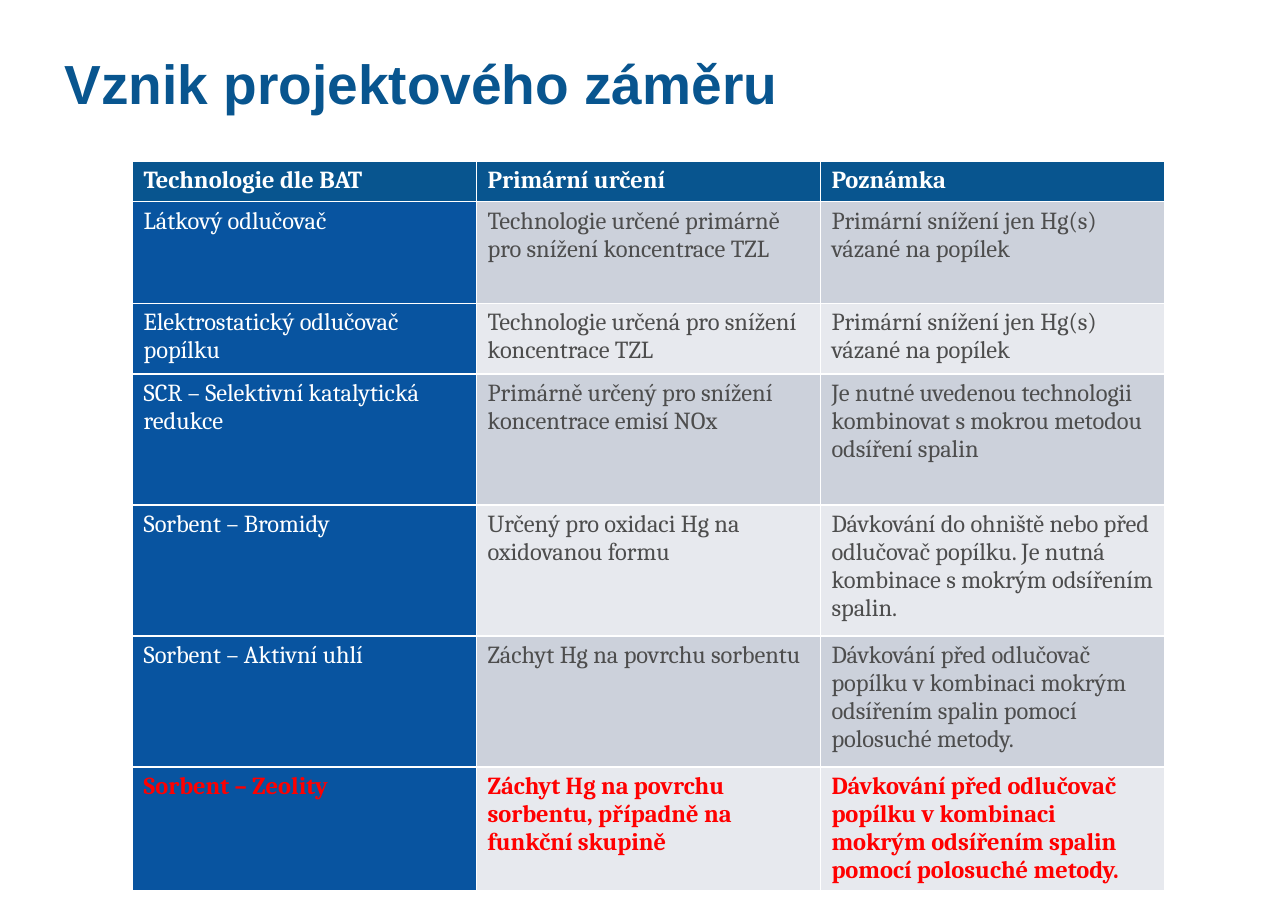
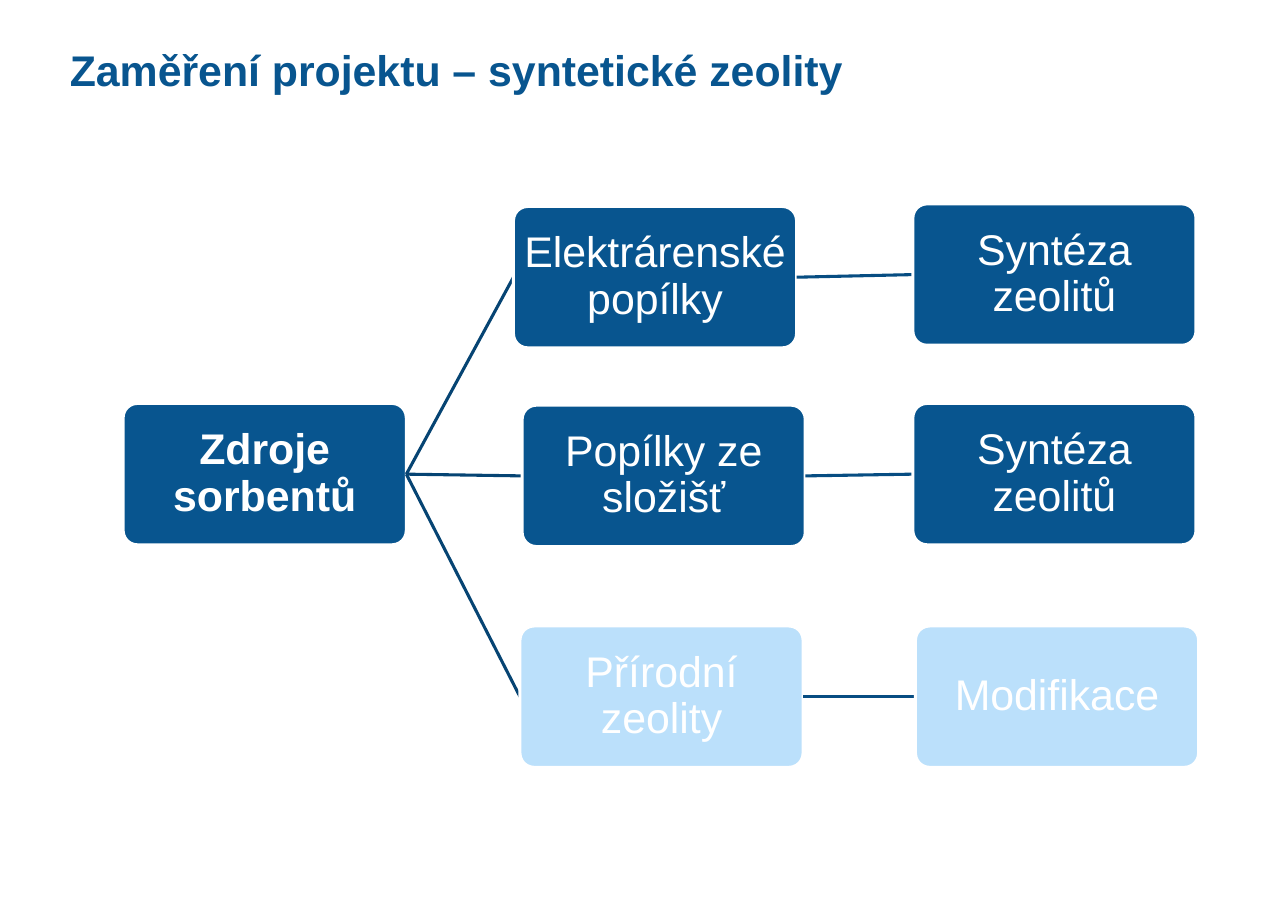
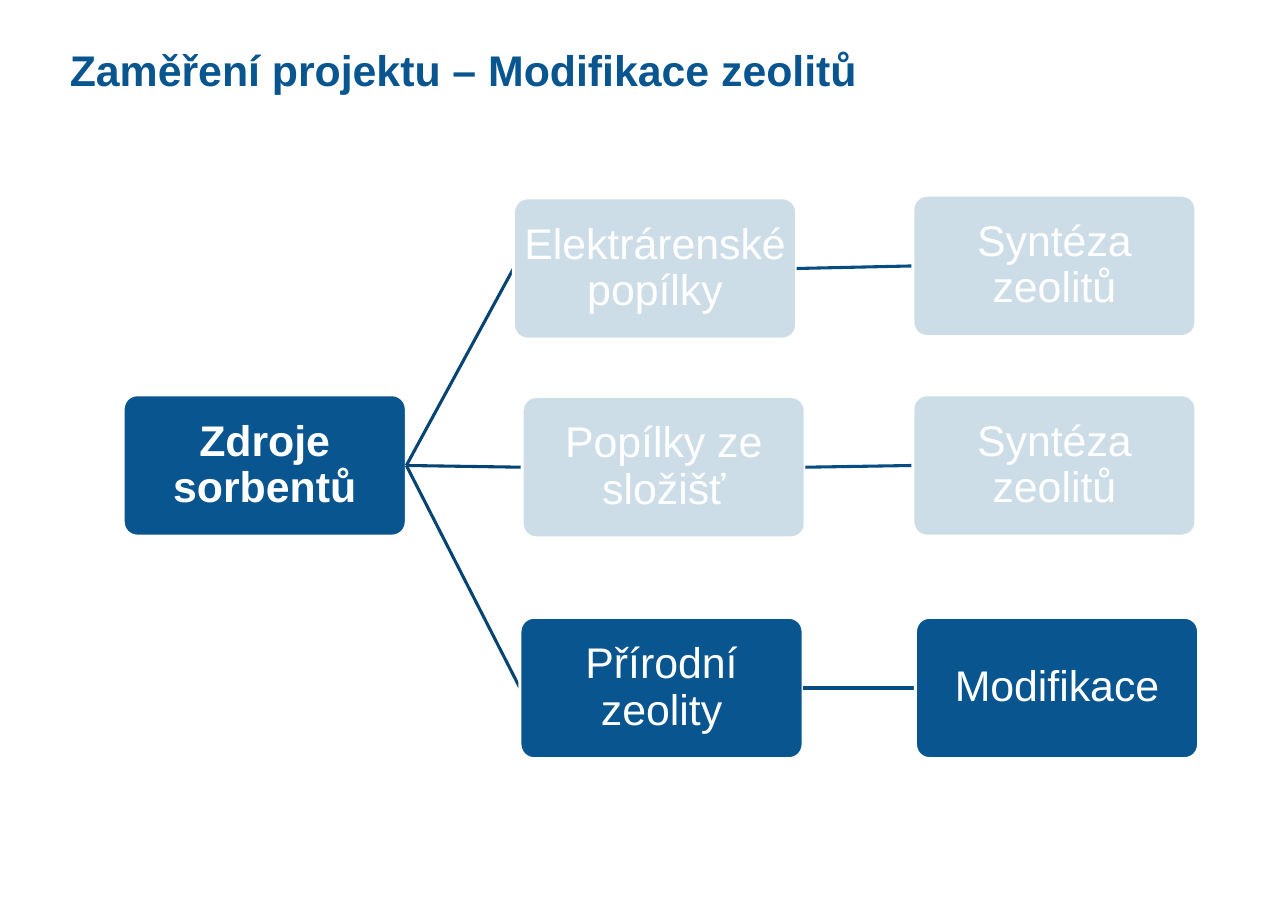
"""Build three slides on mercury capture technologies and sorbent sources."""
from dataclasses import dataclass

from lxml.etree import SubElement
from pptx import Presentation
from pptx.dml.color import RGBColor
from pptx.enum.shapes import MSO_CONNECTOR, MSO_SHAPE
from pptx.enum.text import MSO_ANCHOR, MSO_AUTO_SIZE, PP_ALIGN
from pptx.oxml.ns import qn
from pptx.util import Cm, Pt


@dataclass(frozen=True)
class Theme:
    blue: str = "08558F"
    pale_blue: str = "BBE0FB"
    first_column: str = "0854A0"
    bands: tuple = ("CCD1DB", "E7E9EE")
    white: str = "FFFFFF"
    grey: str = "4D4D4D"
    red: str = "FF0000"
    root_link: str = "064473"
    branch_link: str = "074D82"
    font: str = "Arial"
    table_font: str = "Cambria"
    big_title: int = 36
    title: int = 28
    box: int = 28
    table: int = 16
    line: int = 2


THEME = Theme()

TECHNOLOGY_TITLE = "Vznik projektového záměru"
TECHNOLOGIES = [
    ("Technologie dle BAT", "Primární určení", "Poznámka"),
    ("Látkový odlučovač",
     "Technologie určené primárně pro snížení koncentrace TZL",
     "Primární snížení jen Hg(s) vázané na popílek"),
    ("Elektrostatický odlučovač popílku",
     "Technologie určená pro snížení koncentrace TZL",
     "Primární snížení jen Hg(s) vázané na popílek"),
    ("SCR – Selektivní katalytická redukce",
     "Primárně určený pro snížení koncentrace emisí NOx",
     "Je nutné uvedenou technologii kombinovat s mokrou metodou odsíření spalin"),
    ("Sorbent – Bromidy",
     "Určený pro oxidaci Hg na oxidovanou formu",
     "Dávkování do ohniště nebo před odlučovač popílku. Je nutná kombinace "
     "s mokrým odsířením spalin."),
    ("Sorbent – Aktivní uhlí",
     "Záchyt Hg na povrchu sorbentu",
     "Dávkování před odlučovač popílku v kombinaci mokrým odsířením spalin "
     "pomocí polosuché metody."),
    ("Sorbent – Zeolity",
     "Záchyt Hg na povrchu sorbentu, případně na funkční skupině",
     "Dávkování před odlučovač popílku v kombinaci mokrým odsířením spalin "
     "pomocí polosuché metody."),
]
ROW_HEIGHTS = (0.94, 2.34, 1.63, 3.02, 3.02, 3.02, 2.67)
COLUMN_WIDTH = 7.93

ROOT = ("Zdroje sorbentů", 2.84, 9.3)
BRANCHES = [
    (("Elektrárenské popílky", 11.84, 4.76), ("Syntéza zeolitů", 21.05, 4.7)),
    (("Popílky ze složišť", 12.04, 9.34), ("Syntéza zeolitů", 21.05, 9.3)),
    (("Přírodní zeolity", 11.99, 14.43), ("Modifikace", 21.11, 14.43)),
]
BOX_WIDTH, BOX_HEIGHT = 6.53, 3.26

SOLID, PALE, FADED = (THEME.blue, 100), (THEME.pale_blue, 100), (THEME.blue, 20)
DIAGRAMS = [
    ("Zaměření projektu – syntetické zeolity", 0, (SOLID, SOLID, PALE)),
    ("Zaměření projektu – Modifikace zeolitů", -0.2, (FADED, FADED, SOLID)),
]


def rgb(color):
    return RGBColor.from_string(color)


def set_font(p, name, size, color, bold=False):
    p.font.name = name
    p.font.size = Pt(size)
    p.font.bold = bold
    p.font.color.rgb = rgb(color)


def set_margins(tf, horizontal, vertical):
    tf.margin_left = tf.margin_right = Cm(horizontal)
    tf.margin_top = tf.margin_bottom = Cm(vertical)


def add_titled_slide(prs, text, size, left, top, width, height):
    s = prs.slides.add_slide(prs.slide_layouts[5])
    title = s.shapes.title
    title.left, title.top = Cm(left), Cm(top)
    title.width, title.height = Cm(width), Cm(height)
    tf = title.text_frame
    tf.text = text
    tf.word_wrap = True
    tf.auto_size = MSO_AUTO_SIZE.NONE
    tf.vertical_anchor = MSO_ANCHOR.MIDDLE
    set_margins(tf, 0.16, 0.08)
    p = tf.paragraphs[0]
    p.alignment = PP_ALIGN.LEFT
    set_font(p, THEME.font, size, THEME.blue, bold=True)
    return s


def cell_style(row, column):
    """Return the fill, text colour and weight of a table cell."""
    if row == 0:
        return THEME.blue, THEME.white, True
    fill = THEME.first_column if column == 0 else THEME.bands[(row - 1) % 2]
    if row == len(TECHNOLOGIES) - 1:
        return fill, THEME.red, True
    return fill, THEME.white if column == 0 else THEME.grey, False


def add_technology_table(s):
    columns = len(TECHNOLOGIES[0])
    table = s.shapes.add_table(
        len(TECHNOLOGIES), columns, Cm(3.06), Cm(3.71),
        Cm(COLUMN_WIDTH * columns), Cm(sum(ROW_HEIGHTS))).table
    for column in table.columns:
        column.width = Cm(COLUMN_WIDTH)
    for i, (texts, height) in enumerate(zip(TECHNOLOGIES, ROW_HEIGHTS)):
        table.rows[i].height = Cm(height)
        for j, text in enumerate(texts):
            fill, color, bold = cell_style(i, j)
            cell = table.cell(i, j)
            cell.text = text
            cell.fill.solid()
            cell.fill.fore_color.rgb = rgb(fill)
            set_font(cell.text_frame.paragraphs[0], THEME.table_font,
                     THEME.table, color, bold)


def add_box(s, node, shift, style, bold=False):
    text, left, top = node
    color, opacity = style
    sp = s.shapes.add_shape(MSO_SHAPE.ROUNDED_RECTANGLE, Cm(left), Cm(top + shift),
                            Cm(BOX_WIDTH), Cm(BOX_HEIGHT))
    sp.adjustments[0] = 0.1
    sp.shadow.inherit = False
    sp.fill.solid()
    sp.fill.fore_color.rgb = rgb(color)
    if opacity < 100:
        clr = sp.fill._xPr.find(qn("a:solidFill"))[0]
        SubElement(clr, qn("a:alpha")).set("val", str(opacity * 1000))
    sp.line.color.rgb = rgb(THEME.white)
    sp.line.width = Pt(THEME.line)
    tf = sp.text_frame
    tf.text = text
    tf.word_wrap = True
    tf.vertical_anchor = MSO_ANCHOR.MIDDLE
    set_margins(tf, 0.05, 0.05)
    p = tf.paragraphs[0]
    p.alignment = PP_ALIGN.CENTER
    p.line_spacing = 0.9
    set_font(p, THEME.font, THEME.box, THEME.white, bold)
    return sp


def add_linked_box(s, parent, node, shift, style, link_color):
    link = s.shapes.add_connector(MSO_CONNECTOR.STRAIGHT, 0, 0, 0, 0)
    link.line.color.rgb = rgb(link_color)
    link.line.width = Pt(THEME.line)
    SubElement(link._element.spPr, qn("a:effectLst"))
    box = add_box(s, node, shift, style)
    link.begin_connect(parent, 3)
    link.end_connect(box, 1)
    return box


def add_diagram(s, shift, styles):
    root = add_box(s, ROOT, shift, SOLID, bold=True)
    for (source, process), style in zip(BRANCHES, styles):
        box = add_linked_box(s, root, source, shift, style, THEME.root_link)
        add_linked_box(s, box, process, shift, style, THEME.branch_link)


def main():
    prs = Presentation()
    prs.slide_width, prs.slide_height = Cm(29.7), Cm(21)
    s = add_titled_slide(prs, TECHNOLOGY_TITLE, THEME.big_title, 1.33, 1, 17.2, 1.8)
    add_technology_table(s)
    for title, shift, styles in DIAGRAMS:
        s = add_titled_slide(prs, title, THEME.title, 1.45, 0.5, 23.4, 2.2)
        add_diagram(s, shift, styles)
    prs.save("out.pptx")


if __name__ == "__main__":
    main()
